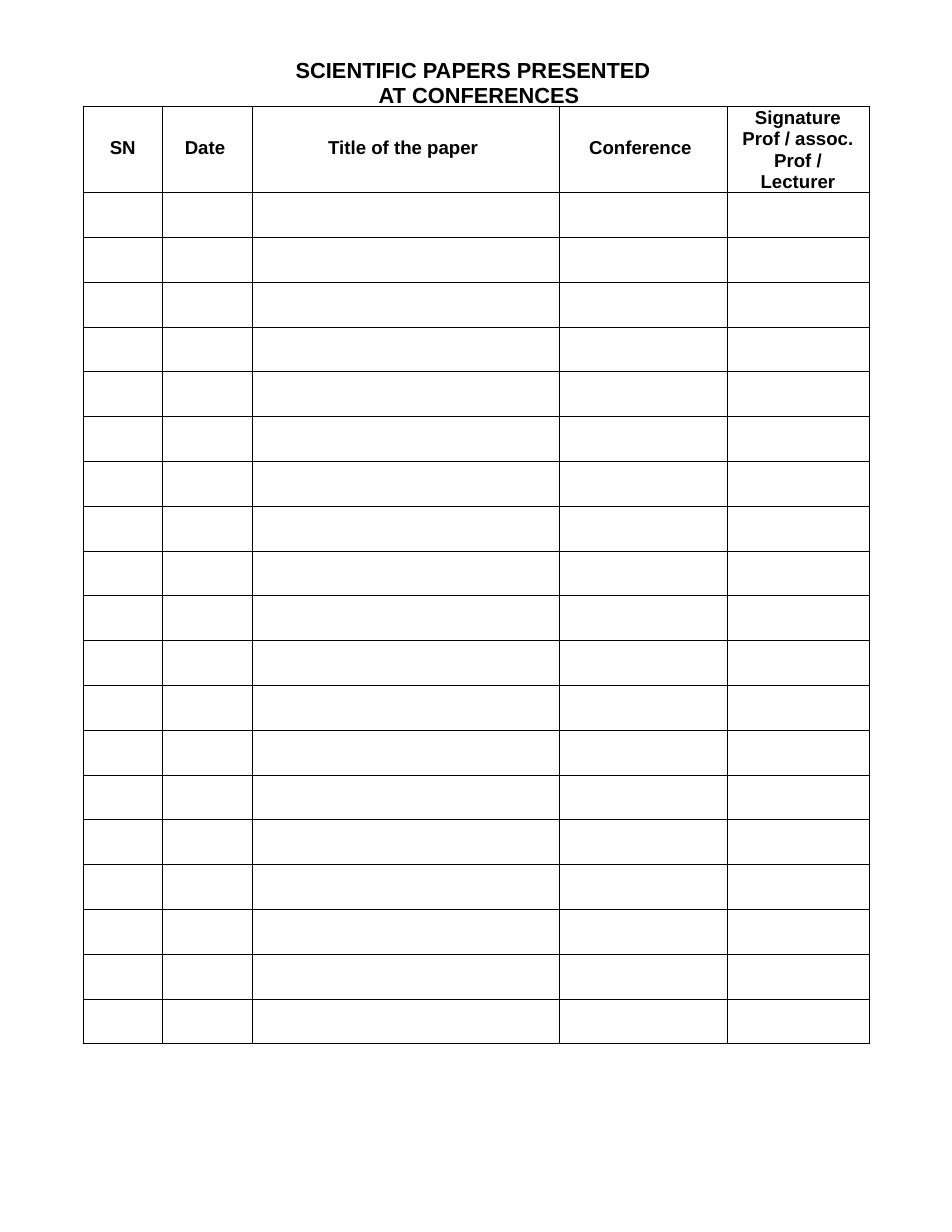
from lxml.etree import SubElement
from pptx import Presentation
from pptx.dml.color import RGBColor
from pptx.enum.text import MSO_ANCHOR, MSO_AUTO_SIZE, PP_ALIGN
from pptx.oxml.ns import qn
from pptx.util import Inches, Pt

COLORS = {"ink": "000000"}
FONT = "Arial"
COLUMN_WIDTHS = [0.71, 0.8, 2.74, 1.5, 1.27]
HEADER_HEIGHT, ENTRY_HEIGHT, ENTRY_COUNT = 0.77, 0.4, 19
# Heading and its left indent in inches; no indent means centred.
HEADINGS = [
    ("SN", 0.24),
    ("Date", 0.2),
    ("Title of the paper", 0.68),
    ("Conference", 0.27),
    ("Signature\vProf / assoc.\nProf /\vLecturer", None),
]


def style_paragraph(para, size, spacing):
    para.line_spacing = Pt(spacing)
    for span in para.runs:
        span.font.name = FONT
        span.font.size = Pt(size)
        span.font.bold = True
        span.font.color.rgb = RGBColor.from_string(COLORS["ink"])


def indent_paragraph(para, left, first=0):
    para.alignment = PP_ALIGN.LEFT
    properties = para._p.get_or_add_pPr()
    properties.set("marL", str(Inches(left)))
    properties.set("indent", str(Inches(first)))


def add_title(page):
    title = page.shapes.title
    title.left, title.top = Inches(2.62), Inches(0.47)
    title.width, title.height = Inches(3.21), Inches(0.48)
    frame = title.text_frame
    frame.text = "SCIENTIFIC PAPERS PRESENTED AT CONFERENCES"
    frame.word_wrap = True
    frame.auto_size = MSO_AUTO_SIZE.NONE
    frame.vertical_anchor = MSO_ANCHOR.TOP
    frame.margin_left = frame.margin_right = frame.margin_bottom = 0
    frame.margin_top = Inches(0.05)
    para = frame.paragraphs[0]
    indent_paragraph(para, 0.76, -0.74)
    para.space_before = Pt(0)
    style_paragraph(para, 14, 16.1)


def border_cell(cell, row):
    """Draw all four sides; every fifth row line is thinner."""
    properties = cell._tc.get_or_add_tcPr()
    widths = {
        "lnL": 0.5,
        "lnR": 0.5,
        "lnT": 0.25 if row % 5 == 3 else 0.5,
        "lnB": 0.25 if row % 5 == 2 else 0.5,
    }
    for side, width in widths.items():
        line = SubElement(properties, qn(f"a:{side}"), w=str(Pt(width)))
        fill = SubElement(line, qn("a:solidFill"))
        SubElement(fill, qn("a:srgbClr"), val=COLORS["ink"])


def format_cell(cell, row):
    cell.margin_left = cell.margin_right = 0
    cell.margin_top = cell.margin_bottom = 0
    cell.vertical_anchor = MSO_ANCHOR.MIDDLE
    border_cell(cell, row)
    cell.fill.background()


def fill_heading(cell, text, indent):
    cell.text_frame.text = text
    for para in cell.text_frame.paragraphs:
        if indent is None:
            para.alignment = PP_ALIGN.CENTER
        else:
            indent_paragraph(para, indent)
            cell.margin_bottom = Inches(0.04)
        style_paragraph(para, 12, 13.8)


def add_paper_table(page):
    heights = [HEADER_HEIGHT] + [ENTRY_HEIGHT] * ENTRY_COUNT
    frame = page.shapes.add_table(
        len(heights), len(COLUMN_WIDTHS), Inches(0.74), Inches(0.95),
        Inches(sum(COLUMN_WIDTHS)), Inches(sum(heights)))
    table = frame.table
    table.first_row = table.horz_banding = False
    for column, width in zip(table.columns, COLUMN_WIDTHS):
        column.width = Inches(width)
    for index, (row, height) in enumerate(zip(table.rows, heights)):
        row.height = Inches(height)
        for cell in row.cells:
            format_cell(cell, index)
    for cell, (text, indent) in zip(table.rows[0].cells, HEADINGS):
        fill_heading(cell, text, indent)


def main():
    deck = Presentation()
    deck.slide_width, deck.slide_height = Inches(8.5), Inches(11)
    page = deck.slides.add_slide(deck.slide_layouts[5])
    add_title(page)
    add_paper_table(page)
    deck.save("out.pptx")


if __name__ == "__main__":
    main()
